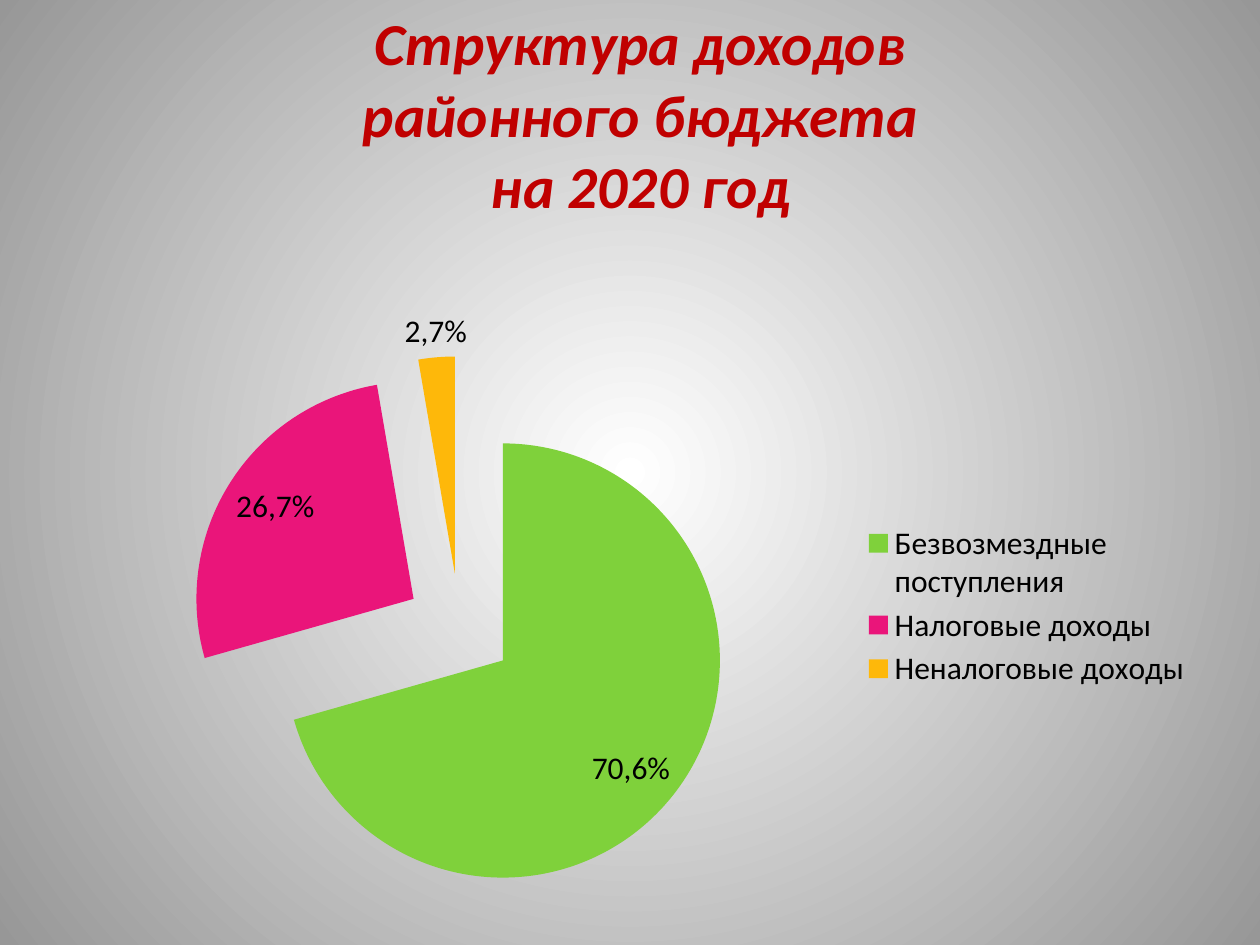
from pptx import Presentation, util as u
from pptx.chart.data import CategoryChartData
from pptx.dml.color import RGBColor
from pptx.enum import chart as ch, text
from pptx.oxml import parse_xml
from pptx.oxml.ns import nsdecls, qn

PX = u.Inches(1) / 126
FONT = "Calibri"
WHITE = RGBColor(0xFF, 0xFF, 0xFF)
GREY = RGBColor(0x97, 0x97, 0x97)
RED = RGBColor(0xC0, 0x00, 0x00)
BLACK = RGBColor(0x00, 0x00, 0x00)
GREEN = RGBColor(0x7F, 0xD1, 0x3B)
PINK = RGBColor(0xEA, 0x15, 0x7A)
AMBER = RGBColor(0xFE, 0xB8, 0x0A)

POS = ch.XL_LABEL_POSITION
INCOME = [
    ("Безвозмездные поступления", 0.706, "70,6%", GREEN, POS.INSIDE_END),
    ("Налоговые доходы", 0.267, "26,7%", PINK, POS.INSIDE_END),
    ("Неналоговые доходы", 0.027, "2,7%", AMBER, POS.OUTSIDE_END),
]


def px(*lengths):
    return [u.Emu(round(n * PX)) for n in lengths]


def style_font(font, size, color):
    font.name, font.size, font.color.rgb = FONT, u.Pt(size), color


def set_radial_background(slide, inner, outer):
    fill = slide.background.fill
    fill.gradient()
    for stop, color, position in zip(fill.gradient_stops, (inner, outer), (0, 1)):
        stop.color.rgb = color
        stop.position = position
    lin = next(slide.element.iter(qn("a:lin")))
    lin.getparent().replace(lin, parse_xml(
        f'<a:path {nsdecls("a")} path="circle">'
        '<a:fillToRect l="50000" t="50000" r="50000" b="50000"/></a:path>'))


def add_title(slide, lines, box):
    tf = slide.shapes.add_textbox(*px(*box)).text_frame
    tf.word_wrap = True
    tf.vertical_anchor = text.MSO_ANCHOR.MIDDLE
    p = tf.paragraphs[0]
    p.text = "\v".join(lines)
    p.alignment = text.PP_ALIGN.CENTER
    for r in p.runs:
        style_font(r.font, 34, RED)
        r.font.bold = r.font.italic = True


def set_layout(element, x, y, w, h, inner=False):
    """Place a chart part by fractions of the chart area."""
    layout = element.find(qn("c:layout"))
    if layout is not None:
        element.remove(layout)
    target = '<c:layoutTarget val="inner"/>' if inner else ""
    layout = parse_xml(
        f'<c:layout {nsdecls("c")}><c:manualLayout>{target}'
        '<c:xMode val="edge"/><c:yMode val="edge"/>'
        f'<c:x val="{x}"/><c:y val="{y}"/><c:w val="{w}"/><c:h val="{h}"/>'
        '</c:manualLayout></c:layout>')
    element.insert(0 if inner else 1, layout)


def explode(series, percent):
    explosion = parse_xml(f'<c:explosion {nsdecls("c")} val="{percent}"/>')
    series._element.find(qn("c:dPt")).addprevious(explosion)


def add_income_pie(slide, box):
    data = CategoryChartData(number_format="0.0%")
    data.categories = [row[0] for row in INCOME]
    data.add_series("Series 1", [row[1] for row in INCOME])
    chart = slide.shapes.add_chart(ch.XL_CHART_TYPE.PIE, *px(*box), data).chart
    style_font(chart.font, 18, BLACK)
    chart.has_title = False
    chart.has_legend = True
    chart.legend.position = ch.XL_LEGEND_POSITION.RIGHT
    chart.legend.include_in_layout = False

    plot = chart.plots[0]
    plot.vary_by_categories = True
    series = plot.series[0]
    for i, (_, _, label, color, position) in enumerate(INCOME):
        point = series.points[i]
        point.format.fill.solid()
        point.format.fill.fore_color.rgb = color
        tf = point.data_label.text_frame
        tf.text = label
        style_font(tf.paragraphs[0].runs[0].font, 18, BLACK)
        point.data_label.position = position
    explode(series, 25)
    labels = series.data_labels
    labels.show_value = True
    labels.show_percentage = False
    labels.number_format = "0.0%"
    labels.number_format_is_linked = False

    plot_area = next(chart.element.iter(qn("c:plotArea")))
    set_layout(plot_area, 0.1, 0.1, 0.48, 0.87, inner=True)
    set_layout(chart.legend._element, 0.69, 0.36, 0.3, 0.28)


def main():
    prs = Presentation()
    prs.slide_width, prs.slide_height = px(1260, 945)
    slide = prs.slides.add_slide(prs.slide_layouts[6])
    set_radial_background(slide, WHITE, GREY)
    add_title(slide, ["Структура доходов", "районного бюджета", "на 2020 год"],
              (74, 0, 1133, 227))
    add_income_pie(slide, (74, 294, 1134, 624))
    prs.save("out.pptx")


if __name__ == "__main__":
    main()
